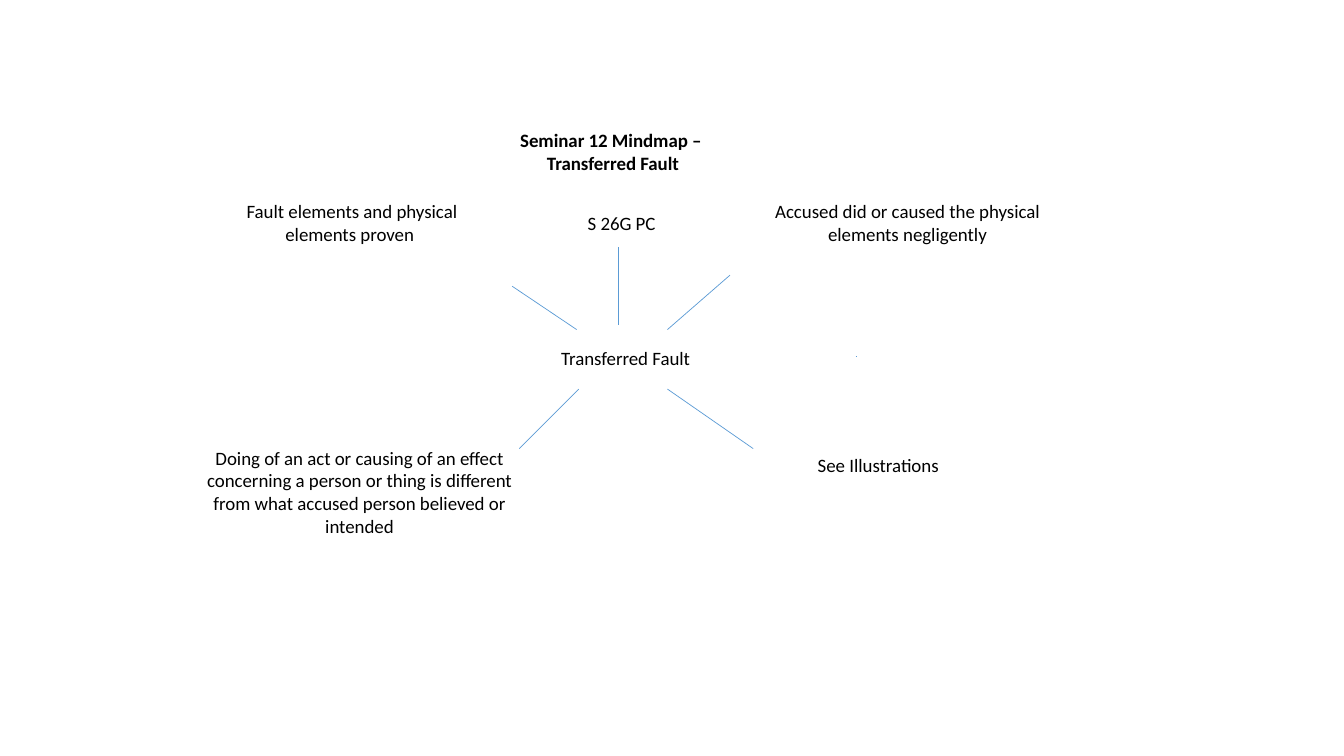
"""Build the Seminar 12 mind map slide on transferred fault."""
from lxml import etree
from pptx import Presentation
from pptx.dml.color import RGBColor
from pptx.enum.shapes import MSO_CONNECTOR
from pptx.enum.text import MSO_ANCHOR, MSO_AUTO_SIZE, PP_ALIGN
from pptx.oxml.ns import qn
from pptx.util import Inches, Pt

BLACK = RGBColor(0x00, 0x00, 0x00)
BRANCH_BLUE = RGBColor(0x5B, 0x9B, 0xD5)


def write_centred(frame, lines, bold=False):
    frame.word_wrap = True
    frame.auto_size = MSO_AUTO_SIZE.SHAPE_TO_FIT_TEXT
    frame.vertical_anchor = MSO_ANCHOR.TOP
    for index, line in enumerate(lines):
        paragraph = frame.add_paragraph() if index else frame.paragraphs[0]
        paragraph.alignment = PP_ALIGN.CENTER
        run = paragraph.add_run()
        run.text = line
        run.font.name = "Calibri"
        run.font.size = Pt(13.5)
        run.font.bold = bold
        run.font.color.rgb = BLACK


prs = Presentation()
prs.slide_width = Inches(13.33)
prs.slide_height = Inches(7.5)
slide = prs.slides.add_slide(prs.slide_layouts[5])

heading = slide.shapes.title
heading.left, heading.top = Inches(4.67), Inches(1.23)
heading.width, heading.height = Inches(2.82), Inches(0.56)
write_centred(heading.text_frame, ["Seminar 12 Mindmap – ", "Transferred Fault"], bold=True)

topics = [
    ("Transferred Fault", 4.96, 3.39, 2.49, 0.33),
    ("S 26G PC", 4.92, 2.05, 2.49, 0.33),
    ("See Illustrations", 7.24, 4.45, 2.94, 0.33),
    ("Doing of an act or causing of an effect concerning a person or thing is "
     "different from what accused person believed or intended", 1.94, 4.38, 3.25, 1.24),
    ("Fault elements and physical elements proven ", 2.06, 1.93, 2.86, 0.56),
    ("Accused did or caused the physical elements negligently", 7.49, 1.93, 3.02, 0.78),
]
for wording, *box in topics:
    topic = slide.shapes.add_textbox(*map(Inches, box))
    write_centred(topic.text_frame, [wording])

branches = [
    (5.72, 3.27, 5.08, 2.84),
    (8.49, 3.54, 8.50, 3.54),
    (6.62, 3.27, 7.24, 2.73),
    (5.15, 4.45, 5.74, 3.86),
    (6.13, 3.22, 6.13, 2.45),
    (7.47, 4.45, 6.62, 3.86),
]
for ends in branches:
    branch = slide.shapes.add_connector(MSO_CONNECTOR.STRAIGHT, *map(Inches, ends))
    branch.line.color.rgb = BRANCH_BLUE
    branch.line.width = Pt(0.5)
    etree.SubElement(branch._element.spPr, qn("a:effectLst"))

prs.save("out.pptx")
